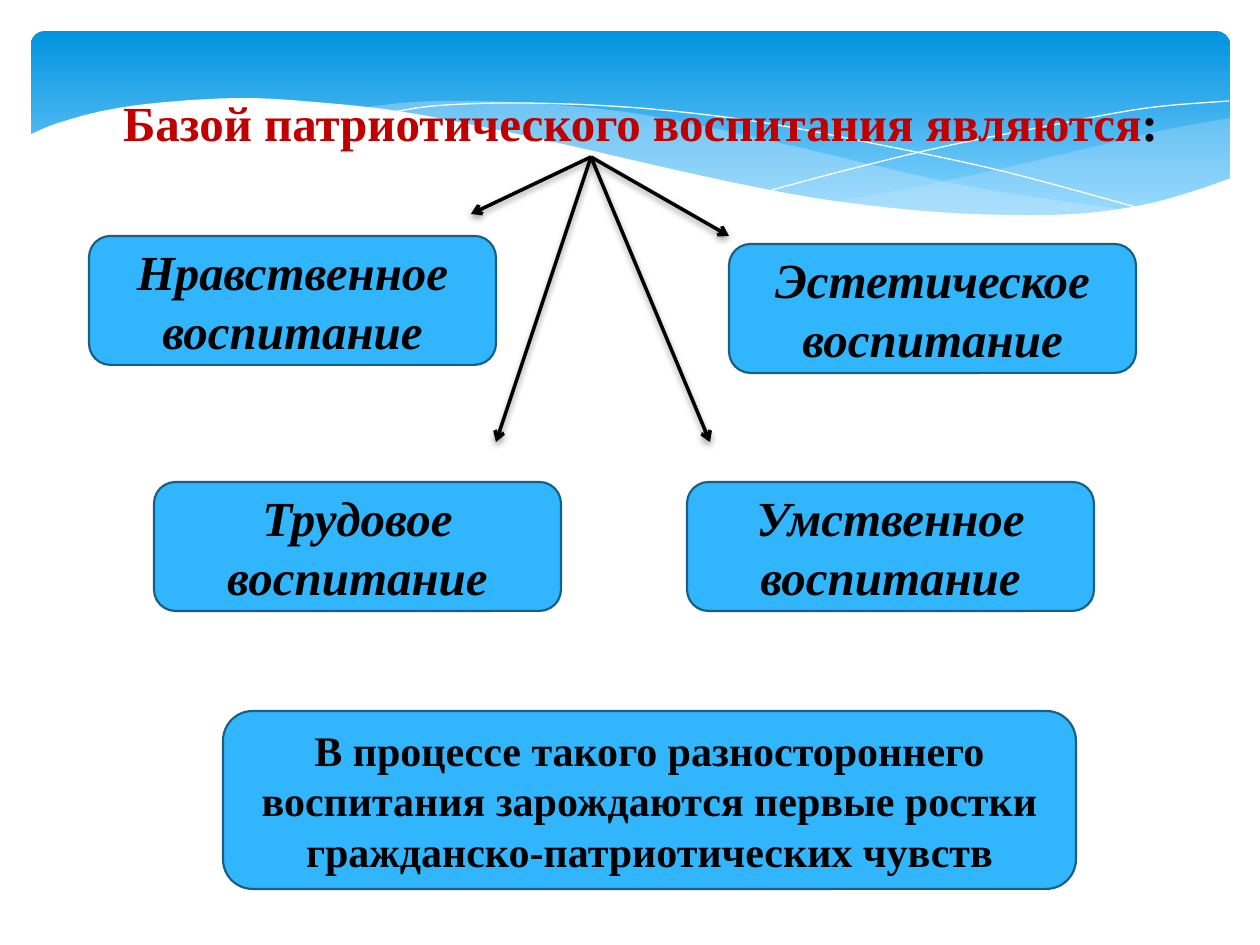
from lxml.etree import SubElement
from pptx import Presentation
from pptx.dml.color import RGBColor
from pptx.enum.shapes import MSO_CONNECTOR, MSO_SHAPE as SHAPE
from pptx.enum.text import MSO_ANCHOR as ANCHOR, MSO_AUTO_SIZE as AUTO, PP_ALIGN as ALIGN
from pptx.oxml.ns import qn
from pptx.util import Pt

SCALE = 914400 / 126  # EMU per px
FONT = "Times New Roman"
COLORS = {
    "sky": "0293E0", "sky_light": "83D3FE", "mist": "C6E7FC", "white": "FFFFFF",
    "box": "31B6FD", "box_line": "195F84", "title": "C00000", "ink": "000000",
}

# Banner curves: each outline is a list of edges, in px from the banner's corner
RIGHT_WAVE = [
    [(1199, 87), (1129, 100), (1054, 118), (951, 142), (859, 161), (802, 171)],
    [(802, 171), (857, 177), (923, 183), (995, 186), (1068, 182), (1129, 171),
     (1165, 161), (1199, 147)],
]
LONG_WAVE = [
    [(329, 77), (382, 71), (448, 70), (526, 74), (602, 82), (686, 98), (762, 115),
     (859, 138), (946, 157), (1024, 169), (1094, 179)],
    [(1094, 179), (1049, 184), (986, 187), (911, 183), (826, 174), (748, 162),
     (637, 139), (535, 115), (452, 96), (376, 82), (329, 77)],
]
FALLING_LINE = [[(358, 82), (402, 75), (474, 72), (560, 74), (641, 80), (735, 92),
                 (845, 113), (971, 140), (1112, 178)]]
RISING_LINE = [[(741, 159), (816, 139), (911, 116), (1022, 94), (1116, 77), (1198, 70)]]
WHITE_WAVE = [
    [(-2, 104), (27, 92), (76, 79), (135, 71), (212, 67), (284, 71), (367, 80),
     (462, 98), (532, 113), (636, 137), (729, 157), (811, 171), (906, 181),
     (988, 184), (1056, 182), (1116, 173), (1166, 159), (1200, 147)],
    [(1200, 251), (-2, 251)],
]


def px(n):
    return round(n * SCALE)


def rgb(name):
    return RGBColor.from_string(COLORS[name])


def smooth(points, steps=6):
    """Catmull-Rom curve through the points."""
    if len(points) < 3:
        return points
    ends = [points[0], *points, points[-1]]
    curve = []
    for a, b, c, d in zip(ends, ends[1:], ends[2:], ends[3:]):
        for i in range(steps):
            t = i / steps
            curve.append(tuple(
                (2 * q + (r - p) * t + (2 * p - 5 * q + 4 * r - s) * t ** 2
                 + (3 * q - p - 3 * r + s) * t ** 3) / 2
                for p, q, r, s in zip(a, b, c, d)))
    return curve + [points[-1]]


def add_curve(slide, x, y, edges, fill=None, alpha=None):
    points = [(px(x + u), px(y + v)) for edge in edges for u, v in smooth(edge)]
    fb = slide.shapes.build_freeform(*points[0], scale=1.0)
    fb.add_line_segments(points[1:], close=fill is not None)
    sp = fb.convert_to_shape()
    sp.shadow.inherit = False
    if fill is None:
        sp.fill.background()
        sp.line.color.rgb = rgb("white")
        sp.line.width = 0
        return
    sp.fill.solid()
    sp.fill.fore_color.rgb = rgb(fill)
    sp.line.fill.background()
    if alpha:
        color = sp._element.spPr.find(qn("a:solidFill"))[0]
        SubElement(color, qn("a:alpha"), val=str(alpha * 1000))


def add_round_rect(slide, x, y, w, h):
    sp = slide.shapes.add_shape(SHAPE.ROUNDED_RECTANGLE, px(x), px(y), px(w), px(h))
    sp.shadow.inherit = False
    return sp


def add_banner(slide, x, y, w, h):
    sp = add_round_rect(slide, x, y, w, h)
    sp.adjustments[0] = 0.07
    sp.line.fill.background()
    sp.fill.gradient()
    sp.fill.gradient_angle = 270
    for stop, name, pos in zip(sp.fill.gradient_stops, ("sky", "sky_light"), (0, 0.9)):
        stop.color.rgb = rgb(name)
        stop.position = pos
    add_curve(slide, x, y, RIGHT_WAVE, "mist", 29)
    add_curve(slide, x, y, LONG_WAVE, "mist", 40)
    add_curve(slide, x, y, FALLING_LINE)
    add_curve(slide, x, y, RISING_LINE)
    add_curve(slide, x, y, WHITE_WAVE, "white")


def style_paragraph(p, size, italic=False):
    p.alignment = ALIGN.CENTER
    p.font.name = FONT
    p.font.size = Pt(size)
    p.font.bold = True
    p.font.italic = italic


def add_title(slide, x, y, w, h):
    tf = slide.shapes.add_textbox(px(x), px(y), px(w), px(h)).text_frame
    tf.word_wrap = True
    tf.auto_size = AUTO.SHAPE_TO_FIT_TEXT
    p = tf.paragraphs[0]
    style_paragraph(p, 28)
    for text, color in (("Базой патриотического воспитания являются", "title"), (":", "ink")):
        r = p.add_run()
        r.text = text
        r.font.color.rgb = rgb(color)


def add_box(slide, x, y, w, h, text, size, italic=False):
    sp = add_round_rect(slide, x, y, w, h)
    sp.fill.solid()
    sp.fill.fore_color.rgb = rgb("box")
    sp.line.color.rgb = rgb("box_line")
    sp.line.width = Pt(1.25)
    tf = sp.text_frame
    tf.word_wrap = True
    tf.vertical_anchor = ANCHOR.MIDDLE
    p = tf.paragraphs[0]
    p.text = text
    style_paragraph(p, size, italic)
    p.font.color.rgb = rgb("ink")


def add_arrow(slide, x1, y1, x2, y2):
    c = slide.shapes.add_connector(MSO_CONNECTOR.STRAIGHT, px(x1), px(y1), px(x2), px(y2))
    c.line.color.rgb = rgb("ink")
    c.line.width = Pt(2)
    spPr = c._element.spPr
    SubElement(spPr.find(qn("a:ln")), qn("a:tailEnd"), type="arrow")
    # Soft shadow straight below
    shadow = SubElement(SubElement(spPr, qn("a:effectLst")), qn("a:outerShdw"),
                        blurRad=str(Pt(4)), dist=str(Pt(2)), dir="5400000", rotWithShape="0")
    color = SubElement(shadow, qn("a:srgbClr"), val=COLORS["ink"])
    SubElement(color, qn("a:alpha"), val="38000")


def add_diagram(slide, x, y):
    """Four kinds of education, with arrows fanning out from (x, y)."""
    for dx, dy, kind in ((-502, 79, "Нравственное"), (-437, 325, "Трудовое"),
                         (96, 325, "Умственное"), (138, 87, "Эстетическое")):
        add_box(slide, x + dx, y + dy, 407, 129, f"{kind} воспитание", 28, italic=True)
    for dx, dy in ((-120, 57), (138, 79), (-95, 285), (119, 285)):
        add_arrow(slide, x, y, x + dx, y + dy)


def main():
    prs = Presentation()
    prs.slide_width, prs.slide_height = px(1260), px(945)
    slide = prs.slides.add_slide(prs.slide_layouts[6])
    add_banner(slide, 31, 31, 1199, 197)
    add_title(slide, 105, 86, 1071, 72)
    add_diagram(slide, 591, 157)
    # Conclusion
    add_box(slide, 223, 711, 853, 178,
            "В процессе такого разностороннего воспитания зарождаются первые ростки "
            "гражданско-патриотических чувств", 24)
    prs.save("out.pptx")


if __name__ == "__main__":
    main()
